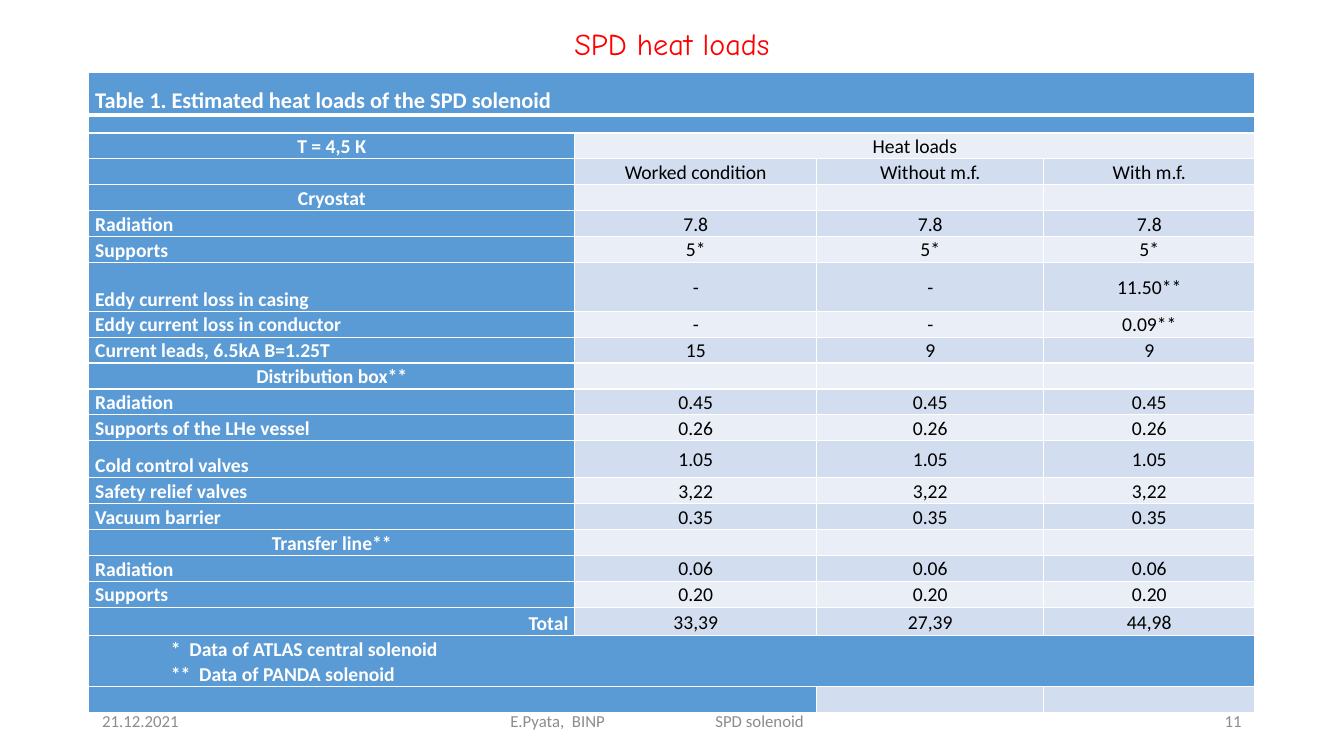
from dataclasses import dataclass
from typing import Optional

from pptx import Presentation
from pptx.dml.color import RGBColor
from pptx.enum.text import MSO_ANCHOR as Anchor, MSO_AUTO_SIZE as AutoSize, PP_ALIGN as Align
from pptx.oxml.ns import qn
from pptx.util import Emu, Pt
from lxml.etree import SubElement, Element

EMU_PER_PX = 6350  # 1920 x 1080 px page


def px(length: int) -> Emu:
    return Emu(length * EMU_PER_PX)


@dataclass(frozen=True)
class Theme:
    title_font: str = "Comic Neue"
    body_font: str = "Calibri"
    title: str = "FF0000"
    footer: str = "8C8C8C"
    label: str = "FFFFFF"
    value: str = "000000"
    border: str = "FFFFFF"
    label_fill: str = "5B9BD5"
    bands: tuple[str, str] = ("EAEFF7", "D2DEEF")
    title_size: float = 21.6
    caption_size: float = 16
    cell_size: float = 14
    spacer_size: float = 6
    footer_size: float = 12
    thin: float = 1
    thick: float = 3


THEME = Theme()


@dataclass(frozen=True)
class HeatRow:
    label: str = ""
    values: tuple[str, ...] = ("", "", "")
    height: int = 37
    align: Align = Align.LEFT
    merge: Optional[tuple[int, int]] = None
    size: float = THEME.cell_size
    after: float = 0
    indent: int = 0


@dataclass(frozen=True)
class FooterItem:
    text: str
    left: int
    width: int
    align: Align = Align.LEFT
    inset: int = 14
    tab: Optional[int] = None


def same(value: str) -> tuple[str, ...]:
    return (value,) * 3


COLUMNS = (694, 346, 324, 302)
ROWS = (
    HeatRow("Table 1. Estimated heat loads of the SPD solenoid", height=60,
            merge=(0, 3), size=THEME.caption_size, after=8),
    HeatRow(height=26, merge=(0, 3), size=THEME.spacer_size),
    HeatRow("T = 4,5 К", ("Heat loads", "", ""), align=Align.CENTER, merge=(1, 3)),
    HeatRow(values=("Worked condition", "Without m.f.", "With m.f.")),
    HeatRow("Cryostat", align=Align.CENTER),
    HeatRow("Radiation", same("7.8")),
    HeatRow("Supports", same("5*")),
    HeatRow("Eddy current loss in casing", ("-", "-", "11.50**"), height=70),
    HeatRow("Eddy current loss in conductor", ("-", "-", "0.09**")),
    HeatRow("Current leads, 6.5kA B=1.25T", ("15", "9", "9")),
    HeatRow("Distribution box**", align=Align.CENTER),
    HeatRow("Radiation", same("0.45")),
    HeatRow("Supports of the LHe vessel", same("0.26")),
    HeatRow("Cold control valves", same("1.05"), height=53),
    HeatRow("Safety relief valves", same("3,22")),
    HeatRow("Vacuum barrier", same("0.35")),
    HeatRow("Transfer line**", align=Align.CENTER),
    HeatRow("Radiation", same("0.06")),
    HeatRow("Supports", same("0.20")),
    HeatRow("Total", ("33,39", "27,39", "44,98"), height=41, align=Align.RIGHT),
    HeatRow("*  Data of ATLAS central solenoid\n**  Data of PANDA solenoid",
            height=73, merge=(0, 3), indent=108),
    HeatRow(merge=(0, 1)),
)
FOOTER = (
    FooterItem("21.12.2021", 132, 432),
    FooterItem("E.Pyata,  BINP\tSPD solenoid", 360, 1165, inset=369, tab=293),
    FooterItem("11", 1356, 432, Align.RIGHT),
)


def add_span(para, text: str, font: str, size: float, color: str, bold: bool = False) -> None:
    span = para.add_run()
    span.text = text
    span.font.name = font
    span.font.size = Pt(size)
    span.font.bold = bold
    span.font.color.rgb = RGBColor.from_string(color)


def add_title(page, text: str) -> None:
    box = page.shapes.title
    box.left, box.top, box.width, box.height = map(px, (806, 32, 441, 66))
    frame = box.text_frame
    frame.auto_size = AutoSize.NONE
    frame.vertical_anchor = Anchor.MIDDLE
    para = frame.paragraphs[0]
    para.alignment = Align.LEFT
    para.line_spacing = 0.9
    add_span(para, text, THEME.title_font, THEME.title_size, THEME.title)


def add_borders(cell, top: float, bottom: float) -> None:
    properties = cell._tc.get_or_add_tcPr()
    widths = {"a:lnL": THEME.thin, "a:lnR": THEME.thin, "a:lnT": top, "a:lnB": bottom}
    for tag, width in widths.items():
        line = SubElement(properties, qn(tag), w=str(Pt(width)))
        fill = SubElement(line, qn("a:solidFill"))
        SubElement(fill, qn("a:srgbClr"), val=THEME.border)


def fill_cell(cell, row: HeatRow, row_index: int, column: int) -> None:
    is_label = column == 0
    text = row.label if is_label else row.values[column - 1]
    add_borders(cell,
                THEME.thick if row_index == 1 else THEME.thin,
                THEME.thick if row_index == 0 else THEME.thin)
    cell.fill.solid()
    cell.fill.fore_color.rgb = RGBColor.from_string(
        THEME.label_fill if is_label else THEME.bands[row_index % 2])
    cell.margin_left = cell.margin_right = px(9)
    cell.margin_top = cell.margin_bottom = 0
    cell.vertical_anchor = Anchor.BOTTOM if is_label or row.merge else Anchor.MIDDLE
    for index, line in enumerate(text.split("\n")):
        frame = cell.text_frame
        para = frame.add_paragraph() if index else frame.paragraphs[0]
        para.alignment = row.align if is_label else Align.CENTER
        para.line_spacing = 1.07
        para.space_after = Pt(row.after)
        if is_label and row.indent:
            para._p.get_or_add_pPr().set("marL", str(px(row.indent)))
        if line:
            add_span(para, line, THEME.body_font, row.size,
                     THEME.label if is_label else THEME.value, is_label)
        else:  # an empty cell must not outgrow its row
            SubElement(para._p, qn("a:endParaRPr"), sz=str(int(row.size * 100)))


def add_heat_table(page) -> None:
    heights = [row.height for row in ROWS]
    table = page.shapes.add_table(len(ROWS), len(COLUMNS), px(127), px(104),
                                  px(sum(COLUMNS)), px(sum(heights))).table
    table.horz_banding = False
    for column, width in zip(table.columns, COLUMNS):
        column.width = px(width)
    for row_index, row in enumerate(ROWS):
        table.rows[row_index].height = px(row.height)
        for column in range(len(COLUMNS)):
            fill_cell(table.cell(row_index, column), row, row_index, column)
        if row.merge:
            first, last = row.merge
            table.cell(row_index, first).merge(table.cell(row_index, last))


def add_footer(page, item: FooterItem) -> None:
    box = page.shapes.add_textbox(px(item.left), px(1001), px(item.width), px(58))
    frame = box.text_frame
    frame.word_wrap = True
    frame.vertical_anchor = Anchor.MIDDLE
    frame.margin_left = px(item.inset)
    para = frame.paragraphs[0]
    para.alignment = item.align
    if item.tab:
        stops = Element(qn("a:tabLst"))
        SubElement(stops, qn("a:tab"), pos=str(px(item.tab)), algn="l")
        para._p.get_or_add_pPr().append(stops)
    add_span(para, item.text, THEME.body_font, THEME.footer_size, THEME.footer)


def main() -> None:
    deck = Presentation()
    deck.slide_width, deck.slide_height = px(1920), px(1080)
    page = deck.slides.add_slide(deck.slide_layouts[5])
    add_title(page, "SPD heat loads")
    for item in FOOTER:
        add_footer(page, item)
    add_heat_table(page)
    deck.save("out.pptx")


if __name__ == "__main__":
    main()
